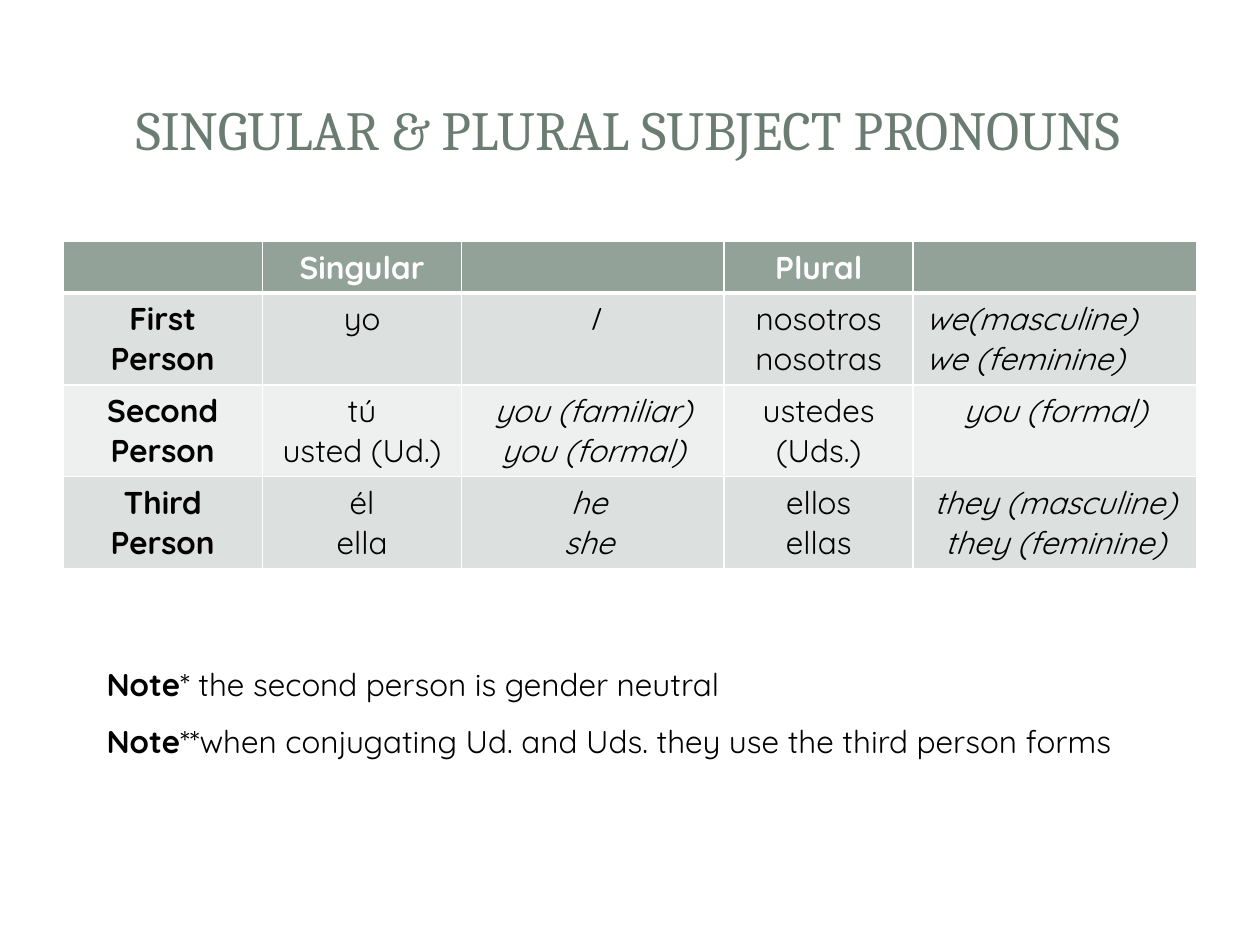
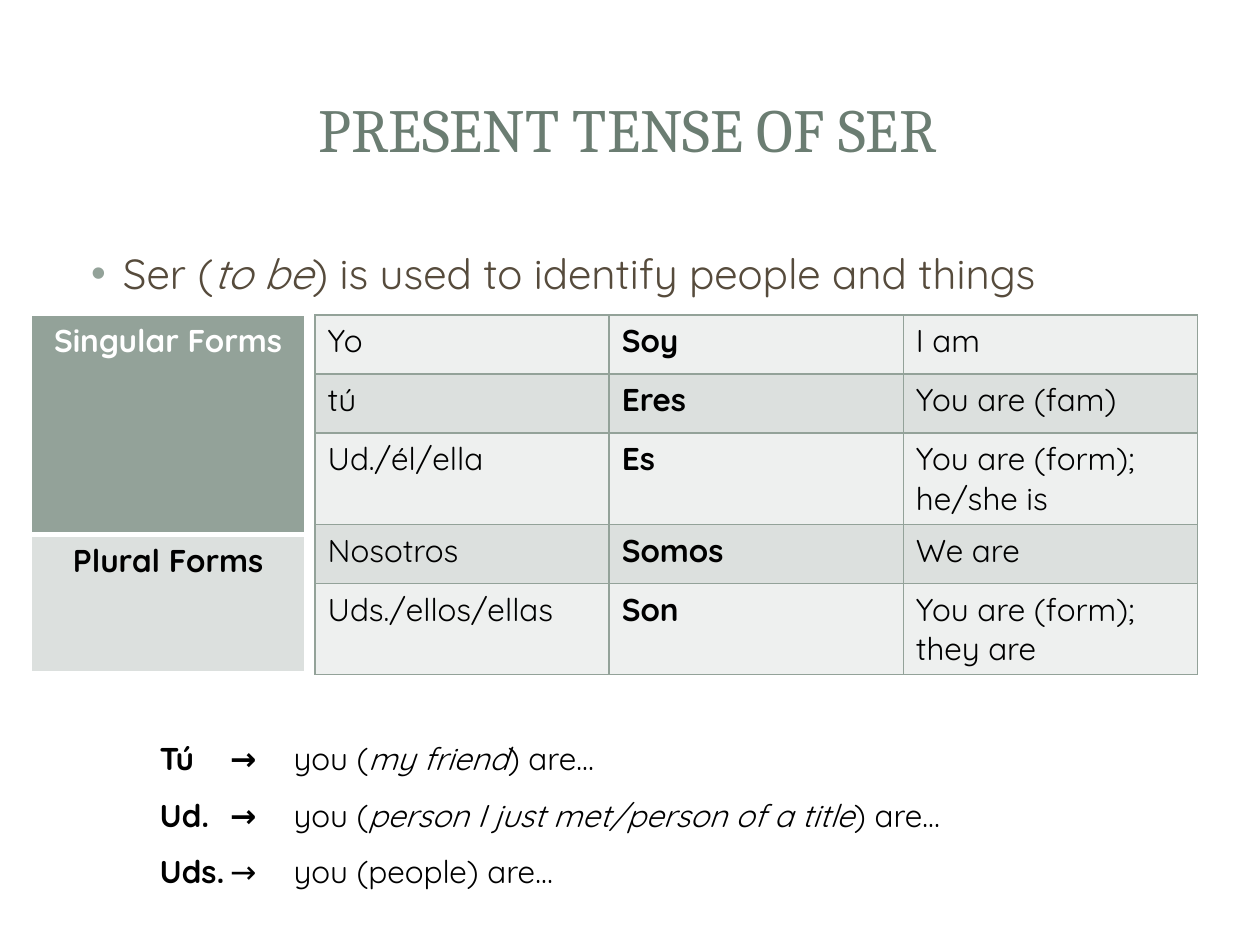
from lxml.etree import SubElement, Element
from pptx import Presentation
from pptx.dml.color import RGBColor
from pptx.enum.shapes import MSO_SHAPE
from pptx.enum.text import MSO_ANCHOR, PP_ALIGN
from pptx.oxml.ns import qn
from pptx.util import Cm, Pt

HEADING_FONT, BODY_FONT = "Cambria", "Quicksand"
TITLE_GREEN, SAGE, BROWN = "6B7D72", "93A299", "564B3C"
BAND_DARK, BAND_LIGHT = "DCE0DE", "EEF0EF"
WHITE, BLACK = "FFFFFF", "000000"
LEFT, CENTER = PP_ALIGN.LEFT, PP_ALIGN.CENTER
CARD_BOX = (0.25, 0.28, 24.89, 18.52)
TITLE_BAND = (0.76, 0.76, 23.88, 3.68)
TITLE_PANEL = (1.04, 1.04, 23.29, 3.1)
TITLE_BOX = (1.19, 1.14, 22.94, 2.9)


def rgb(value):
    return RGBColor.from_string(value)


# Frame shared by the slides
def add_panel(page, box, kind=MSO_SHAPE.RECTANGLE):
    panel = page.shapes.add_shape(kind, *map(Cm, box))
    panel.shadow.inherit = False
    panel.fill.solid()
    panel.fill.fore_color.rgb = rgb(WHITE)
    panel.line.fill.background()
    return panel


def add_backdrop(page):
    card = add_panel(page, CARD_BOX, MSO_SHAPE.ROUNDED_RECTANGLE)
    card.adjustments[0] = 0.02
    band = add_panel(page, TITLE_BAND)
    color = band.fill._xPr.find(qn("a:solidFill"))[0]
    SubElement(color, qn("a:alpha"), val="83000")
    add_panel(page, TITLE_PANEL)


# Text
def write_paragraph(para, spans, size=18, color=BLACK, name=BODY_FONT,
                    align=LEFT):
    """Fill a paragraph with (text, style) spans; style is "", "b" or "i"."""
    para.alignment = align
    for text, style in spans:
        span = para.add_run()
        span.text = text
        span.font.bold = style == "b"
        span.font.italic = style == "i"
    for font in (para.font, *(span.font for span in para.runs)):
        font.size, font.name = Pt(size), name
        font.color.rgb = rgb(color)


def write_paragraphs(frame, paragraphs, **look):
    for index, spans in enumerate(paragraphs):
        para = frame.add_paragraph() if index else frame.paragraphs[0]
        write_paragraph(para, spans, **look)


def add_text(page, box, paragraphs, line_spacing=1.0, **look):
    frame = page.shapes.add_textbox(*map(Cm, box)).text_frame
    frame.word_wrap = True
    write_paragraphs(frame, paragraphs, **look)
    for para in frame.paragraphs:
        para.line_spacing = line_spacing
    return frame


def add_property(para, tag, **attributes):
    element = Element(qn(tag), attributes)
    para.font  # the default run properties must stay last
    para._p.pPr.find(qn("a:defRPr")).addprevious(element)
    return element


def add_title(page, text, size):
    frame = add_text(page, TITLE_BOX, [[(text, "")]], size=size,
                     color=TITLE_GREEN, name=HEADING_FONT, align=CENTER)
    frame.vertical_anchor = MSO_ANCHOR.MIDDLE


def add_bullet_line(page, box, spans):
    para = add_text(page, box, [spans], size=24, color=BROWN).paragraphs[0]
    para.space_before = Pt(4.8)
    para._p.pPr.set("marL", str(Cm(0.96)))
    para._p.pPr.set("indent", str(Cm(-0.64)))
    color = add_property(para, "a:buClr")
    SubElement(color, qn("a:srgbClr"), val=SAGE)
    add_property(para, "a:buFont", typeface="Arial")
    add_property(para, "a:buChar", char="•")


# Tables
def set_borders(cell, color, top=1, bottom=1):
    widths = {"a:lnL": 1, "a:lnR": 1, "a:lnT": top, "a:lnB": bottom}
    properties = cell._tc.get_or_add_tcPr()
    for index, (tag, width) in enumerate(widths.items()):
        line = Element(qn(tag), w=str(Pt(width)))
        fill = SubElement(line, qn("a:solidFill"))
        SubElement(fill, qn("a:srgbClr"), val=color)
        properties.insert(index, line)


def add_grid(page, left, top, widths, heights):
    table = page.shapes.add_table(
        len(heights), len(widths), Cm(left), Cm(top),
        Cm(sum(widths)), Cm(sum(heights))).table
    table.first_row = table.horz_banding = False
    for column, width in zip(table.columns, widths):
        column.width = Cm(width)
    for row, height in zip(table.rows, heights):
        row.height = Cm(height)
    return table


def fill_cell(cell, text, fill, style="", color=BLACK, align=LEFT):
    cell.fill.solid()
    cell.fill.fore_color.rgb = rgb(fill)
    lines = [[(line, style)] for line in text.split("\n")]
    write_paragraphs(cell.text_frame, lines, color=color, align=align)


def add_headed_table(page, left, top, widths, heights, rows, styles):
    """Table with a sage header row set off by a thick white rule."""
    table = add_grid(page, left, top, widths, heights)
    for r, row in enumerate(rows):
        fill = (BAND_LIGHT, BAND_DARK)[r % 2] if r else SAGE
        for c, text in enumerate(row):
            cell = table.cell(r, c)
            fill_cell(cell, text, fill, styles[c] if r else "b",
                      BLACK if r else WHITE, CENTER)
            set_borders(cell, WHITE, top=3 if r == 1 else 1,
                        bottom=1 if r else 3)
    return table


def add_forms_table(page, left, top, widths, heights, rows):
    """Banded table with sage rules and a bold middle column."""
    table = add_grid(page, left, top, widths, heights)
    for r, row in enumerate(rows):
        for c, text in enumerate(row):
            cell = table.cell(r, c)
            fill_cell(cell, text, (BAND_LIGHT, BAND_DARK)[r % 2],
                      "b" if c == 1 else "")
            set_borders(cell, SAGE)


# Slides
def build_pronouns(page):
    add_title(page, "SINGULAR & PLURAL SUBJECT PRONOUNS", 31.5)
    rows = [
        ("", "Singular", "", "Plural", ""),
        ("First Person", "yo", "I", "nosotros\nnosotras",
         "we(masculine)\nwe (feminine)"),
        ("Second Person", "tú\nusted (Ud.)", "you (familiar)\nyou (formal)",
         "ustedes (Uds.)", "you (formal)"),
        ("Third Person", "él\nella", "he \nshe ", "ellos\nellas",
         "they (masculine)\nthey (feminine)"),
    ]
    table = add_headed_table(page, 1.27, 4.87, [4.02, 4.02, 5.29, 3.81, 5.72],
                             [1.04] + [1.85] * 3, rows, ("b", "", "i", "", "i"))
    for para in table.cell(1, 4).text_frame.paragraphs:
        para.alignment = LEFT
    add_text(page, (1.9, 12.91, 22.07, 2.49), [
        [("Note", "b"), ("* the second person is gender neutral", "")],
        [("Note", "b"), ("**when conjugating Ud. and Uds. they use the "
                         "third person forms", "")],
    ], line_spacing=1.5)


def build_ser(page):
    add_title(page, "PRESENT TENSE OF SER", 35)
    add_bullet_line(page, (1.27, 4.87, 22.86, 12.14), [
        ("Ser (", ""), ("to be", "i"),
        (") is used to identify people and things", "")])
    add_headed_table(page, 0.64, 6.35, [5.5], [4.42, 2.77],
                     [("Singular Forms",), ("Plural Forms",)], ("b",))
    one_line, two_lines = 1.19, 1.84
    add_forms_table(page, 6.35, 6.35, [5.93] * 3,
                    [one_line, one_line, two_lines, one_line, two_lines], [
        ("Yo", "Soy", "I am"),
        ("tú", "Eres", "You are (fam)"),
        ("Ud./él/ella", "Es", "You are (form); he/she is"),
        ("Nosotros", "Somos", "We are"),
        ("Uds./ellos/ellas", "Son", "You are (form); they are"),
    ])

    # Ways of saying "you", aligned on tab stops
    frame = add_text(page, (2.97, 14.39, 19.25, 3.66), [
        [("Tú\t→\t", "b"), ("you (", ""), ("my friend", "i"), (") are…", "")],
        [("Ud.\t→\t", "b"), ("you (", ""),
         ("person I just met/person of a title", "i"), (") are…", "")],
        [("Uds.\t", "b"), ("→\tyou (people) are…", "")],
    ], line_spacing=1.5)
    for para in frame.paragraphs:
        stops = add_property(para, "a:tabLst")
        for position in (1.42, 2.7):
            SubElement(stops, qn("a:tab"), pos=str(Cm(position)), algn="l")


def main():
    deck = Presentation()
    deck.slide_width, deck.slide_height = Cm(25.4), Cm(19.05)
    for build in (build_pronouns, build_ser):
        page = deck.slides.add_slide(deck.slide_layouts[6])
        add_backdrop(page)
        build(page)
    deck.save("out.pptx")


if __name__ == "__main__":
    main()
